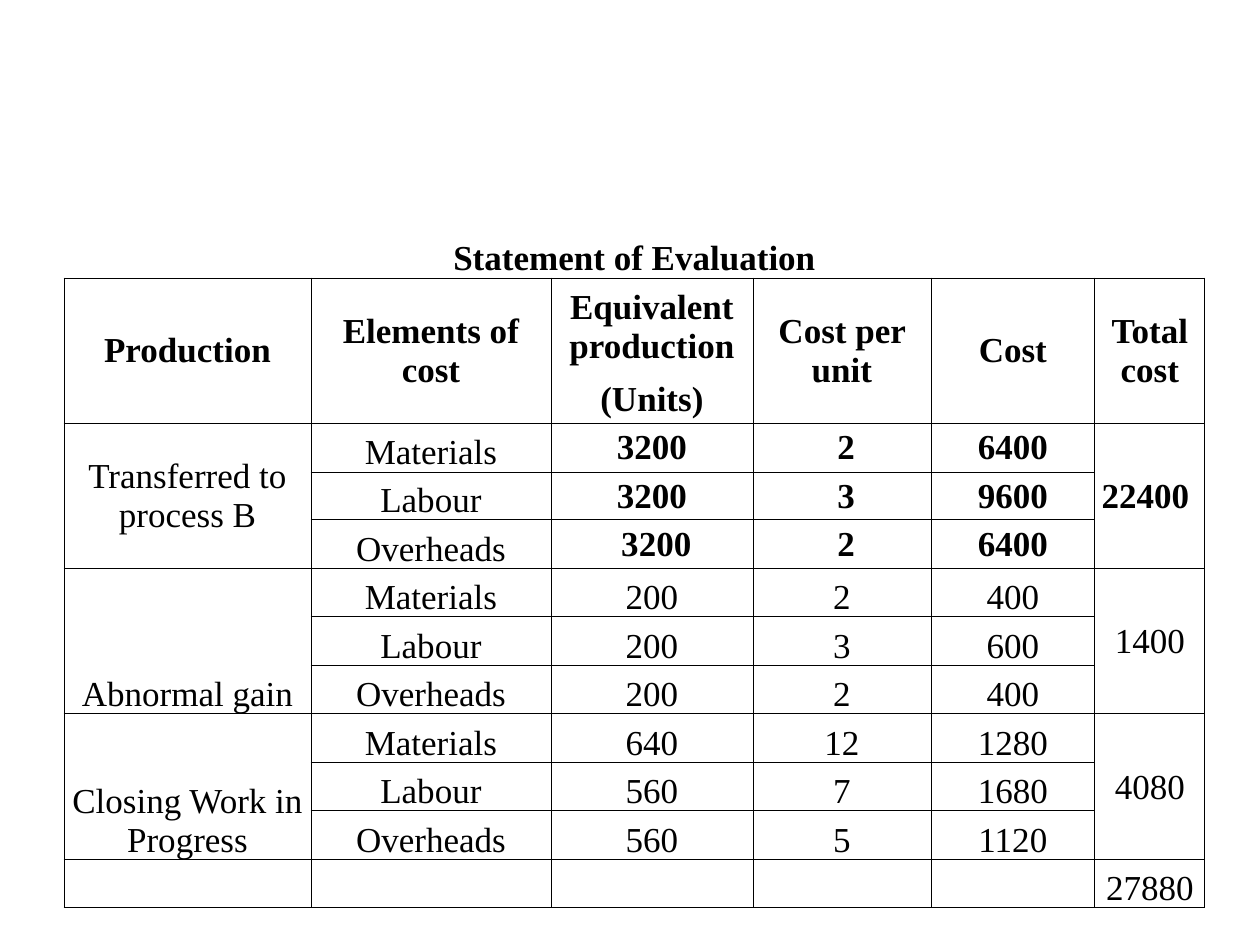
from lxml.etree import SubElement
from pptx import Presentation
from pptx.dml.color import RGBColor
from pptx.enum.text import MSO_ANCHOR as Anchor, PP_ALIGN as Align
from pptx.oxml.ns import qn
from pptx.util import Pt

PX = 914400 // 126
COLORS = {"ink": "000000"}
FONT = "Times New Roman"
COLUMN_WIDTHS = [247, 240, 202, 178, 164, 110]
ROW_HEIGHTS = [83, 97, 48] + [49, 48] * 5
ROWS = [
    ["Statement of Evaluation"],
    ["Production", "Elements of cost", "Equivalent production", "Cost per unit", "Cost", "Total cost"],
    ["", "", "(Units)"],
    ["Transferred to process B", "Materials", "3200", " 2", "6400", ""],
    ["", "Labour", "3200", " 3", "9600", "22400 "],
    ["", "Overheads", " 3200", " 2", "6400", ""],
    ["Abnormal gain", "Materials", "200", "2", "400", "1400"],
    ["", "Labour", "200", "3", "600"],
    ["", "Overheads", "200", "2", "400"],
    ["Closing Work in Progress", "Materials", "640", "12", "1280", "4080"],
    ["", "Labour", "560", "7", "1680"],
    ["", "Overheads", "560", "5", "1120"],
    ["", "", "", "", "", "27880"],
]
MERGES = [(0, 0, 0, 5)]
MERGES += [(1, column, 2, column) for column in (0, 1, 3, 4, 5)]
MERGES += [(row, 0, row + 2, 0) for row in (3, 6, 9)]
MERGES += [(row, 5, row + 2, 5) for row in (6, 9)]
OPEN_EDGES = {(0, column): "LRT" for column in range(6)}
OPEN_EDGES |= {(1, 2): "B", (2, 2): "T", (3, 5): "B", (4, 5): "TB", (5, 5): "T"}


def set_borders(cell, open_edges):
    properties = cell._tc.get_or_add_tcPr()
    for edge in "LRTB":
        line = SubElement(properties, qn(f"a:ln{edge}"), w=str(Pt(0.5)))
        if edge in open_edges:
            SubElement(line, qn("a:noFill"))
        else:
            fill = SubElement(line, qn("a:solidFill"))
            SubElement(fill, qn("a:srgbClr"), val=COLORS["ink"])


presentation = Presentation()
presentation.slide_width = 1260 * PX
presentation.slide_height = 945 * PX
slide = presentation.slides.add_slide(presentation.slide_layouts[6])

shape = slide.shapes.add_table(
    len(ROWS), len(COLUMN_WIDTHS), 64 * PX, 195 * PX,
    sum(COLUMN_WIDTHS) * PX, sum(ROW_HEIGHTS) * PX,
)
table = shape.table
table.first_row = False
table.horz_banding = False
for column, width in zip(table.columns, COLUMN_WIDTHS):
    column.width = width * PX
for row, height in zip(table.rows, ROW_HEIGHTS):
    row.height = height * PX
for top, left, bottom, right in MERGES:
    table.cell(top, left).merge(table.cell(bottom, right))

for row in range(len(ROWS)):
    for column in range(len(COLUMN_WIDTHS)):
        cell = table.cell(row, column)
        set_borders(cell, OPEN_EDGES.get((row, column), ""))
        cell.fill.background()
        cell.margin_left = cell.margin_right = cell.margin_top = PX
        cell.margin_bottom = 0
        is_header = row in (1, 2)
        is_transfer = 3 <= row <= 5
        is_total = column == 5 and 3 <= row <= 11
        is_middle = is_header or is_total or (is_transfer and column != 1)
        cell.vertical_anchor = Anchor.MIDDLE if is_middle else Anchor.BOTTOM
        paragraph = cell.text_frame.paragraphs[0]
        if column < len(ROWS[row]):
            paragraph.text = ROWS[row][column]
        paragraph.alignment = Align.CENTER
        paragraph.font.name = FONT
        paragraph.font.size = Pt(20)
        paragraph.font.bold = row < 3 or (is_transfer and column >= 2)
        paragraph.font.color.rgb = RGBColor.from_string(COLORS["ink"])

presentation.save("out.pptx")
